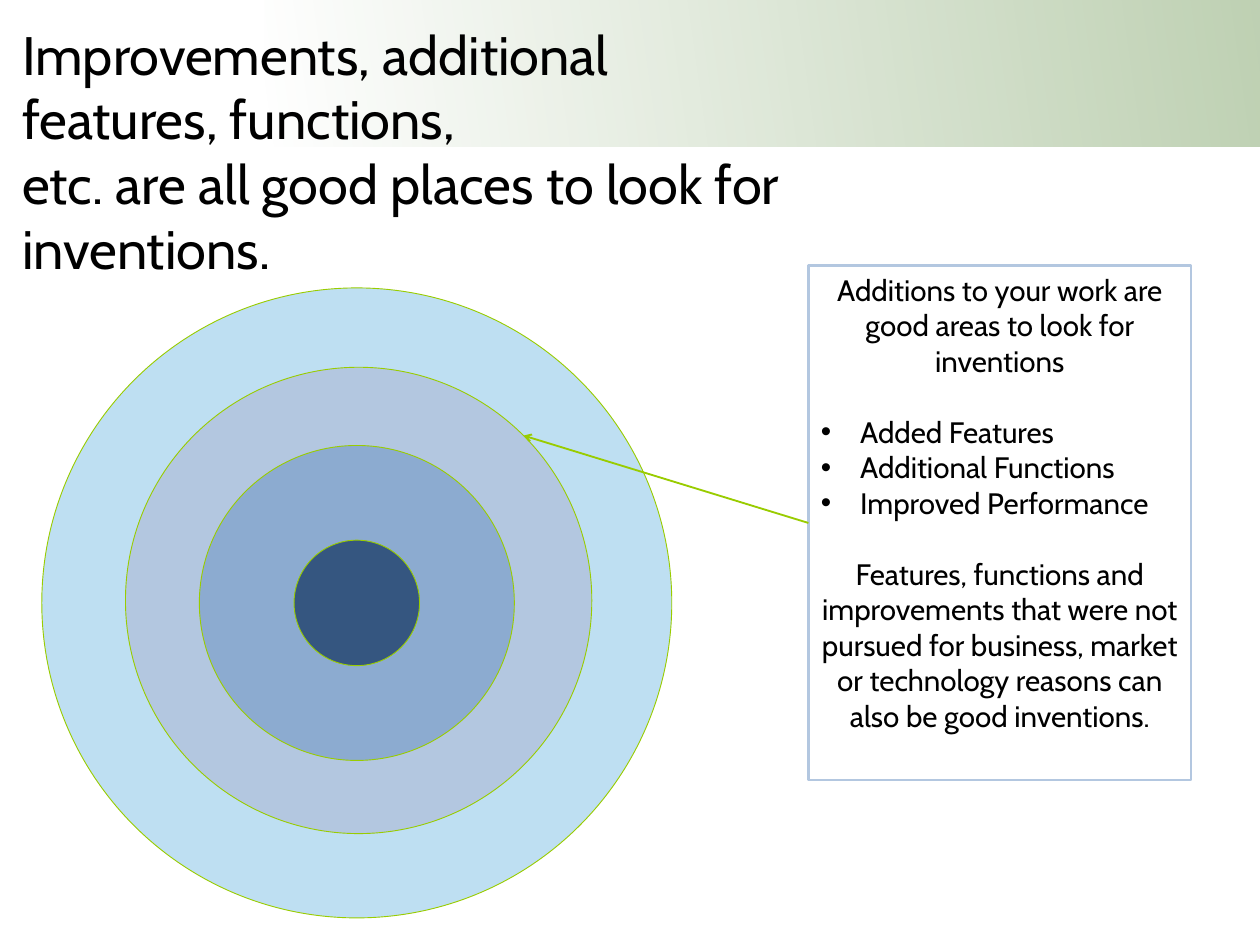
from pptx import Presentation
from pptx.dml.color import RGBColor
from pptx.enum.shapes import MSO_CONNECTOR, MSO_SHAPE
from pptx.enum.text import MSO_ANCHOR, PP_ALIGN
from pptx.oxml.ns import qn
from pptx.util import Pt
from lxml.etree import SubElement

HUES = {
    "white": "FFFFFF", "black": "000000", "green": "508231", "lime": "99CC00",
    "sky": "BEDFF2", "mist": "B3C7E0", "steel": "8CABD0", "navy": "355680",
}


def hue(name):
    return RGBColor.from_string(HUES[name])


def add_run(para, text, size):
    run = para.add_run()
    run.text = text
    run.font.name = "Cabin"
    run.font.size = Pt(size)
    run.font.color.rgb = hue("black")


deck = Presentation()
deck.slide_width, deck.slide_height = Pt(1024), Pt(768)
slide = deck.slides.add_slide(deck.slide_layouts[5])
shapes = slide.shapes

# Faded band behind the title
band = shapes.add_shape(MSO_SHAPE.RECTANGLE, Pt(215), Pt(0), Pt(809), Pt(119))
band.shadow.inherit = False
band.line.fill.background()
band.fill.gradient()
band.fill.gradient_angle = 8
for stop, name in zip(band.fill.gradient_stops, ("white", "green")):
    stop.color.rgb = hue(name)
for color in band._element.spPr.iter(qn("a:srgbClr")):
    SubElement(color, qn("a:alpha"), val="36000")
shapes._spTree.insert(2, band._element)

# Title
title = shapes.title
title.left, title.top, title.width, title.height = Pt(8), Pt(12), Pt(824), Pt(260)
frame = title.text_frame
frame.word_wrap = True
frame.vertical_anchor = MSO_ANCHOR.TOP
frame.margin_left = frame.margin_right = Pt(10)
frame.margin_top = frame.margin_bottom = Pt(5)
para = frame.paragraphs[0]
para.alignment = PP_ALIGN.LEFT
lines = ("Improvements, additional", "features, functions,",
         "etc. are all good places to look for inventions.")
for i, line in enumerate(lines):
    if i:
        para.add_line_break()
    add_run(para, line, 44)

# Rings, from the outside in: centre, diameter, colour
rings = [(290, 490, 512, "sky"), (291.5, 488, 379, "mist"),
         (290, 490, 256, "steel"), (290, 490, 102, "navy")]
for x, y, size, name in rings:
    ring = shapes.add_shape(MSO_SHAPE.OVAL, Pt(x - size / 2), Pt(y - size / 2),
                            Pt(size), Pt(size))
    ring.shadow.inherit = False
    ring.fill.solid()
    ring.fill.fore_color.rgb = hue(name)
    ring.line.color.rgb = hue("lime")
    ring.line.width = Pt(0.75)

# Text box
box = shapes.add_shape(MSO_SHAPE.RECTANGLE, Pt(657), Pt(216), Pt(311), Pt(418))
box.shadow.inherit = False
box.fill.background()
box.line.color.rgb = hue("mist")
box.line.width = Pt(2.25)
frame = box.text_frame
frame.word_wrap = True
frame.vertical_anchor = MSO_ANCHOR.TOP
frame.margin_left = frame.margin_right = Pt(10)
frame.margin_top = frame.margin_bottom = Pt(5)

# Paragraphs: text, bulleted, space before
notes = [
    ("Additions to your work are good areas to look for inventions", False, 0),
    ("Added Features", True, 29),
    ("Additional Functions", True, 0),
    ("Improved Performance", True, 0),
    ("Features, functions and improvements that were not pursued for business, "
     "market or technology reasons can also be good inventions.", False, 29),
]
for i, (text, listed, gap) in enumerate(notes):
    para = frame.add_paragraph() if i else frame.paragraphs[0]
    para.alignment = PP_ALIGN.LEFT if listed else PP_ALIGN.CENTER
    para.space_before = Pt(gap)
    if listed:
        props = para._p.get_or_add_pPr()
        props.set("marL", str(Pt(32)))
        props.set("indent", str(-Pt(32)))
        SubElement(props, qn("a:buFont"), typeface="Arial")
        SubElement(props, qn("a:buChar"), char="•")
    add_run(para, text, 24)

# Arrow from the box to the second ring
arrow = shapes.add_connector(MSO_CONNECTOR.STRAIGHT, Pt(657), Pt(425),
                             Pt(425.5), Pt(354))
arrow.begin_connect(box, 1)
arrow.line.color.rgb = hue("lime")
arrow.line.width = Pt(1.5)
SubElement(arrow.line._get_or_add_ln(), qn("a:tailEnd"), type="arrow")
SubElement(arrow._element.spPr, qn("a:effectLst"))

deck.save("out.pptx")
